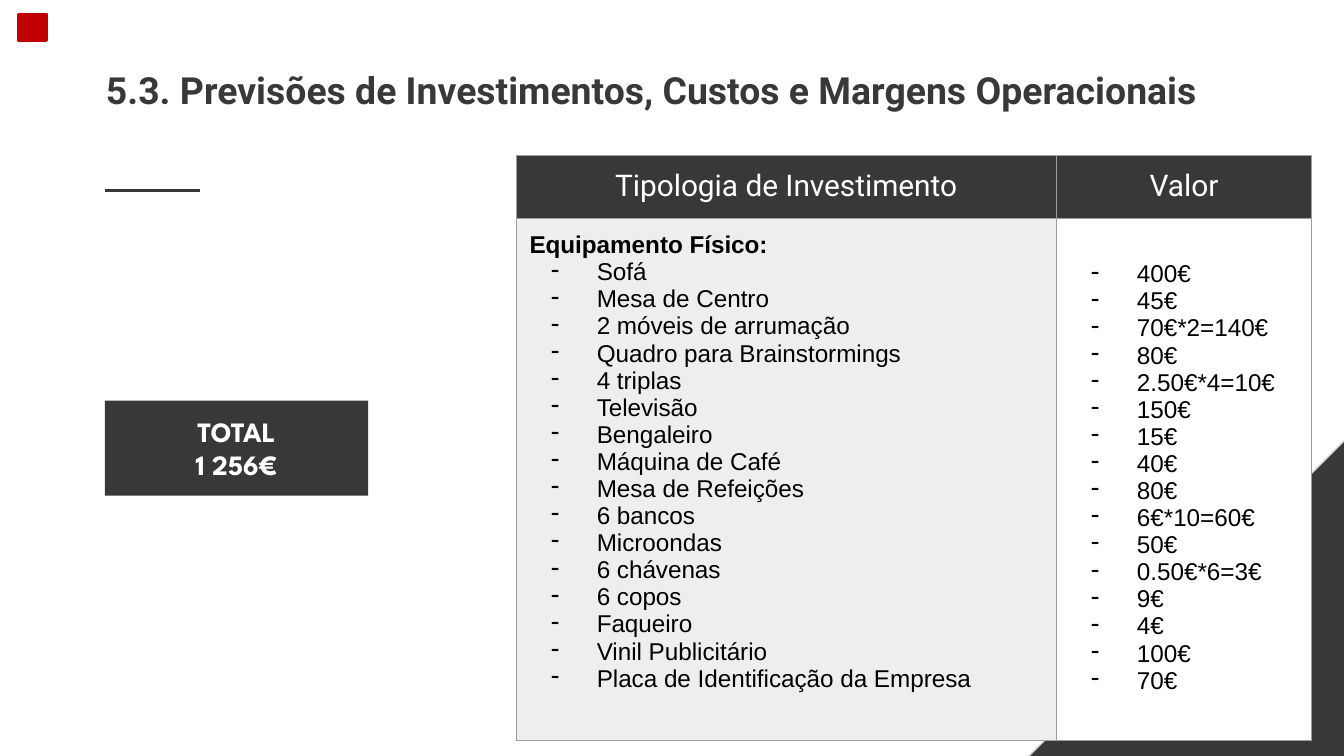
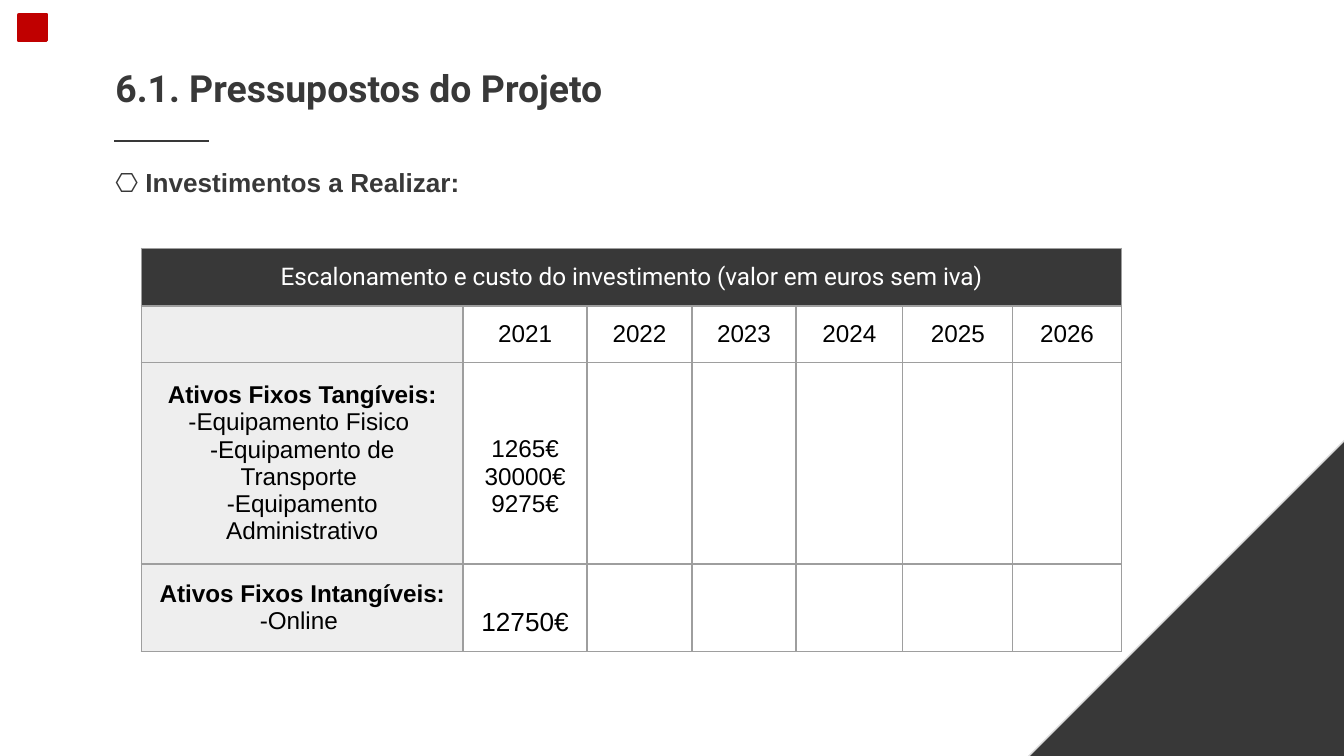
from lxml.etree import SubElement
from pptx import Presentation
from pptx.dml.color import RGBColor
from pptx.enum.shapes import MSO_CONNECTOR, MSO_SHAPE
from pptx.enum.text import MSO_ANCHOR, PP_ALIGN
from pptx.oxml.ns import qn
from pptx.util import Pt

DARK = RGBColor(0x38, 0x38, 0x38)
GRID = RGBColor(0x9E, 0x9E, 0x9E)
EDGE = RGBColor(0xDB, 0xDB, 0xDB)
PALE = RGBColor(0xEE, 0xEE, 0xEE)
RED = RGBColor(0xC0, 0x00, 0x00)
WHITE = RGBColor(0xFF, 0xFF, 0xFF)
BLACK = RGBColor(0x00, 0x00, 0x00)
HEAD_FONT, BODY_FONT, TOTAL_FONT = "Roboto", "Arial", "League Spartan"
INSET = 7.2

EQUIPMENT = [
    ("Sofá", "400€"),
    ("Mesa de Centro", "45€"),
    ("2 móveis de arrumação", "70€*2=140€"),
    ("Quadro para Brainstormings", "80€"),
    ("4 triplas", "2.50€*4=10€"),
    ("Televisão", "150€"),
    ("Bengaleiro", "15€"),
    ("Máquina de Café", "40€"),
    ("Mesa de Refeições", "80€"),
    ("6 bancos", "6€*10=60€"),
    ("Microondas", "50€"),
    ("6 chávenas", "0.50€*6=3€"),
    ("6 copos", "9€"),
    ("Faqueiro", "4€"),
    ("Vinil Publicitário", "100€"),
    ("Placa de Identificação da Empresa", "70€"),
]
TANGIBLE = ["Ativos Fixos Tangíveis:", "-Equipamento Fisico ",
            "-Equipamento de Transporte ", "-Equipamento Administrativo"]
INTANGIBLE = ["Ativos Fixos Intangíveis:", "-Online "]


def style(p, size, name, color, bold=False):
    """Set the font of a whole paragraph."""
    p.font.size, p.font.name, p.font.bold = Pt(size), name, bold
    p.font.color.rgb = color


def set_insets(box, top=INSET):
    """Give a text frame or a cell the shared insets."""
    box.margin_left = box.margin_right = box.margin_bottom = Pt(INSET)
    box.margin_top = Pt(top)


def paragraphs(tf, lines):
    """Write the lines into a text frame and yield each paragraph."""
    for i, line in enumerate(lines):
        p = tf.paragraphs[0] if i == 0 else tf.add_paragraph()
        p.add_run().text = line
        yield p


def add_shape(s, kind, left, top, width, height, fill, line=None, weight=0.75):
    """Add a flat preset shape."""
    sp = s.shapes.add_shape(kind, Pt(left), Pt(top), Pt(width), Pt(height))
    sp.shadow.inherit = False
    sp.fill.solid()
    sp.fill.fore_color.rgb = fill
    if line is None:
        sp.line.fill.background()
    else:
        sp.line.color.rgb = line
        sp.line.width = Pt(weight)
    return sp


def add_heading(s, text, left, top, width, height, size, name):
    """Add a bold heading line."""
    tf = s.shapes.add_textbox(Pt(left), Pt(top), Pt(width), Pt(height)).text_frame
    tf.word_wrap = True
    set_insets(tf)
    for p in paragraphs(tf, [text]):
        p.line_spacing = 1.15
        p.space_before = p.space_after = Pt(12)
        style(p, size, name, DARK, True)


def add_rule(s, left, top):
    """Add the short rule under a title."""
    cx = s.shapes.add_connector(MSO_CONNECTOR.STRAIGHT, Pt(left), Pt(top),
                                Pt(left + 51), Pt(top))
    cx.line.color.rgb = DARK
    cx.line.width = Pt(1.5)
    SubElement(cx._element.spPr, qn("a:effectLst"))


def add_slide(prs, title, left, top, rule_top):
    """Add a slide with its corner triangle, title, rule and red marker."""
    s = prs.slides.add_slide(prs.slide_layouts[6])
    corner = add_shape(s, MSO_SHAPE.RIGHT_TRIANGLE, 457.2, 121, 378, 378, DARK, EDGE)
    corner._element.spPr.xfrm.set("flipH", "1")
    add_heading(s, title, left, top, 638, 41.8, 20, HEAD_FONT)
    add_rule(s, left + 6.5, rule_top)
    add_shape(s, MSO_SHAPE.RECTANGLE, 10, 8, 15, 13.7, RED, RED, 2)
    return s


def add_borders(cell):
    """Draw the grid lines around a cell."""
    tc_pr = cell._tc.get_or_add_tcPr()
    for side in ("lnL", "lnR", "lnT", "lnB"):
        ln = SubElement(tc_pr, qn(f"a:{side}"), w=str(Pt(0.75)))
        SubElement(SubElement(ln, qn("a:solidFill")), qn("a:srgbClr"), val=str(GRID))


def add_table(s, left, top, widths, heights):
    """Add an unstyled table with grid lines."""
    table = s.shapes.add_table(len(heights), len(widths), Pt(left), Pt(top),
                               Pt(sum(widths)), Pt(sum(heights))).table
    table.first_row = table.horz_banding = False
    for column, width in zip(table.columns, widths):
        column.width = Pt(width)
    for row, height in zip(table.rows, heights):
        row.height = Pt(height)
    for cell in table.iter_cells():
        add_borders(cell)
        cell.fill.background()
        cell.text_frame.paragraphs[0].font.size = Pt(13)
    return table


def add_dash(p):
    """Give a paragraph a hanging dash."""
    p_pr = p._p.get_or_add_pPr()
    p_pr.set("marL", str(Pt(36)))
    p_pr.set("indent", str(Pt(-24.5)))
    SubElement(SubElement(p_pr, qn("a:buClr")), qn("a:srgbClr"), val=str(BLACK))
    SubElement(p_pr, qn("a:buChar"), char="-")


def fill_cell(cell, lines, fill=None, size=13, name=BODY_FONT, color=BLACK,
              heading=False, dashes=False, anchor=MSO_ANCHOR.MIDDLE, top=INSET):
    """Write a cell: centred lines or a dashed list, with an optional bold heading."""
    if fill is not None:
        cell.fill.solid()
        cell.fill.fore_color.rgb = fill
    set_insets(cell, top)
    cell.vertical_anchor = anchor
    for i, p in enumerate(paragraphs(cell.text_frame, lines)):
        is_heading = heading and i == 0
        if not dashes:
            p.alignment = PP_ALIGN.CENTER
        elif not is_heading:
            add_dash(p)
        style(p, size, name, color, is_heading)


def fill_header(cell, text, size, anchor):
    """Write a dark header cell."""
    fill_cell(cell, [text], DARK, size, HEAD_FONT, WHITE, anchor=anchor)


def add_total(s):
    """Add the box with the total."""
    sp = add_shape(s, MSO_SHAPE.RECTANGLE, 56.2, 214.6, 141, 51, DARK)
    tf = sp.text_frame
    tf.word_wrap = True
    tf.vertical_anchor = MSO_ANCHOR.TOP
    set_insets(tf)
    for p in paragraphs(tf, ["TOTAL", "1 256€"]):
        p.alignment = PP_ALIGN.CENTER
        style(p, 15, TOTAL_FONT, WHITE, True)


def add_equipment_slide(prs):
    """Build the slide that lists the equipment and its cost."""
    s = add_slide(prs, "5.3. Previsões de Investimentos, Custos e Margens Operacionais",
                  49.7, 25.2, 102)
    table = add_table(s, 276.5, 83.3, [289.4, 136.8], [33, 262.5])
    for col, text in enumerate(["Tipologia de Investimento", "Valor"]):
        fill_header(table.cell(0, col), text, 16, MSO_ANCHOR.TOP)
    items, values = zip(*EQUIPMENT)
    fill_cell(table.cell(1, 0), ["Equipamento Físico:", *items], PALE,
              heading=True, dashes=True, anchor=MSO_ANCHOR.TOP)
    fill_cell(table.cell(1, 1), values, WHITE, dashes=True,
              anchor=MSO_ANCHOR.TOP, top=INSET + 15.6)
    add_total(s)


def add_schedule_slide(prs):
    """Build the slide with the investment schedule."""
    s = add_slide(prs, "6.1. Pressupostos do Projeto", 54.7, 24.3, 75.6)
    table = add_table(s, 75.6, 133,
                      [172.5, 66.4, 56.2, 55.8, 57.2, 59, 58], [31, 29.5, 101.5, 45.5])
    table.cell(0, 0).merge(table.cell(0, 6))
    fill_header(table.cell(0, 0),
                "Escalonamento e custo do investimento (valor em euros sem iva)",
                13, MSO_ANCHOR.MIDDLE)
    corner = table.cell(1, 0)
    corner.fill.solid()
    corner.fill.fore_color.rgb = PALE
    for col, year in enumerate(range(2021, 2027), 1):
        fill_cell(table.cell(1, col), [str(year)])
    fill_cell(table.cell(2, 0), TANGIBLE, PALE, heading=True)
    fill_cell(table.cell(2, 1), ["1265€", "30000€", "9275€"], top=INSET + 14.5)
    fill_cell(table.cell(3, 0), INTANGIBLE, PALE, heading=True)
    fill_cell(table.cell(3, 1), ["12750€"], size=14, top=INSET + 15.6)
    add_heading(s, "⎔ Investimentos a Realizar:", 54.7, 79.2, 236, 31.7, 14, BODY_FONT)


def main():
    """Build and save the presentation."""
    prs = Presentation()
    prs.slide_width, prs.slide_height = Pt(720), Pt(405)
    add_equipment_slide(prs)
    add_schedule_slide(prs)
    prs.save("out.pptx")


if __name__ == "__main__":
    main()
